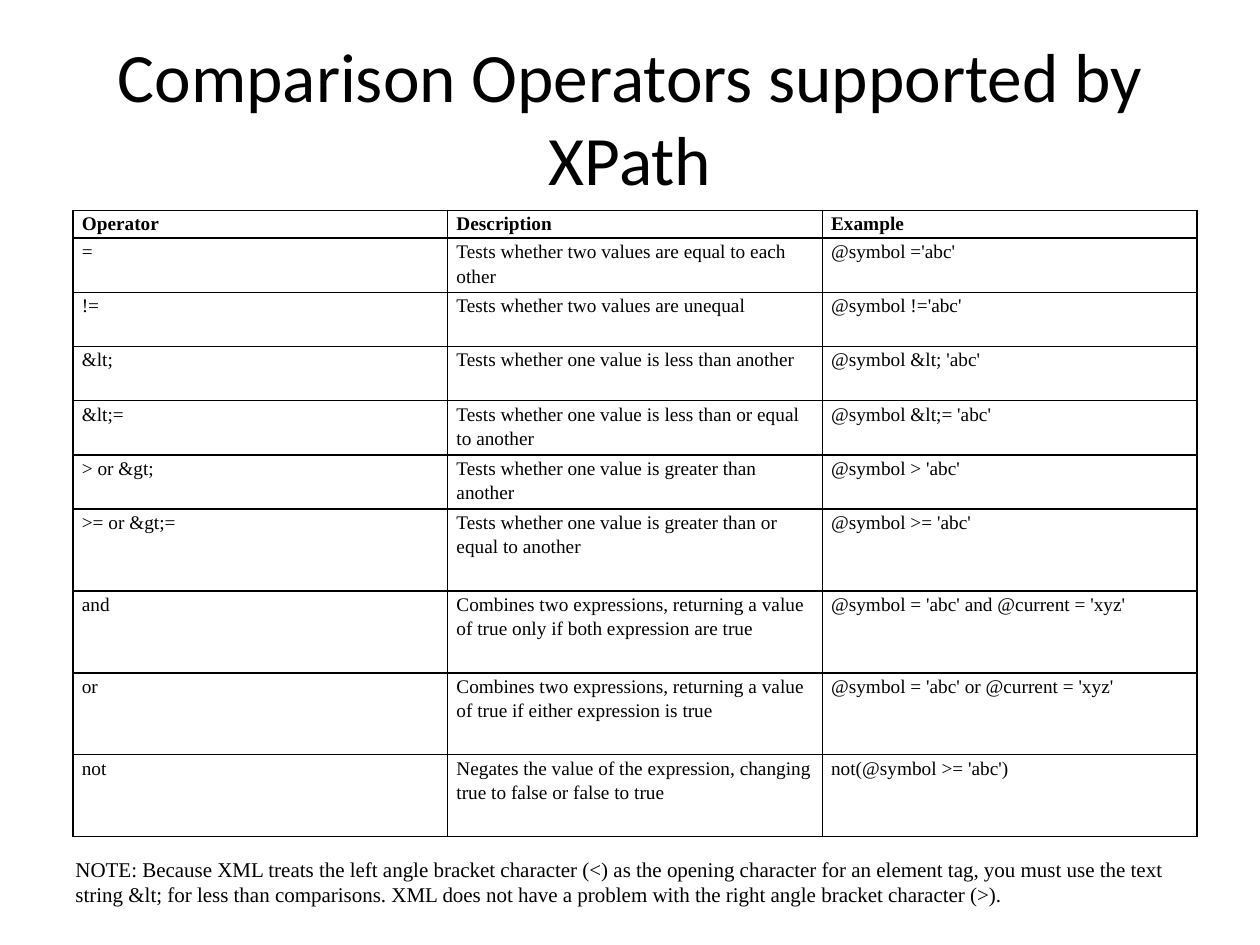
import pptx
import pptx.dml.color
import pptx.enum.text
import pptx.oxml.ns
import pptx.util
from lxml import etree
from pptx.util import Inches

COLORS = {"ink": "000000"}
SERIF = "Times New Roman"
ROW_HEIGHTS = [0.22] + [0.43] * 5 + [0.65] * 4
OPERATORS = [
    ("Operator", "Description", "Example"),
    ("=", "Tests whether two values are equal to each other", "@symbol ='abc'"),
    ("!=", "Tests whether two values are unequal", "@symbol !='abc'"),
    ("&lt;", "Tests whether one value is less than another", "@symbol &lt; 'abc'"),
    ("&lt;=", "Tests whether one value is less than or equal to another", "@symbol &lt;= 'abc'"),
    ("> or &gt;", "Tests whether one value is greater than another", "@symbol > 'abc'"),
    (">= or &gt;=", "Tests whether one value is greater than or equal to another", "@symbol >= 'abc'"),
    ("and", "Combines two expressions, returning a value of true only if both expression are true",
     "@symbol = 'abc' and @current = 'xyz'"),
    ("or", "Combines two expressions, returning a value of true if either expression is true",
     "@symbol = 'abc' or @current = 'xyz'"),
    ("not", "Negates the value of the expression, changing true to false or false to true",
     "not(@symbol >= 'abc')"),
]
NOTE = (
    "NOTE: Because XML treats the left angle bracket character (<) as the opening character "
    "for an element tag, you must use the text string &lt; for less than comparisons. "
    "XML does not have a problem with the right angle bracket character (>)."
)


def write(frame, text, size, font, bold=False):
    frame.text = text
    frame.word_wrap = True
    paragraph = frame.paragraphs[0]
    for run in paragraph.runs:
        run.font.size = pptx.util.Pt(size)
        run.font.name = font
        run.font.bold = bold
        run.font.color.rgb = pptx.dml.color.RGBColor.from_string(COLORS["ink"])
    return paragraph


def add_borders(cell):
    properties = cell._tc.get_or_add_tcPr()
    for side in ("a:lnL", "a:lnR", "a:lnT", "a:lnB"):
        line = etree.SubElement(properties, pptx.oxml.ns.qn(side), w=str(pptx.util.Pt(1)))
        fill = etree.SubElement(line, pptx.oxml.ns.qn("a:solidFill"))
        etree.SubElement(fill, pptx.oxml.ns.qn("a:srgbClr"), val=COLORS["ink"])


def place_title(slide, left, top, width, height):
    title = slide.shapes.title
    title.left, title.top, title.width, title.height = left, top, width, height
    frame = title.text_frame
    paragraph = write(frame, "Comparison Operators supported by XPath", 39.6, "Calibri")
    paragraph.alignment = pptx.enum.text.PP_ALIGN.CENTER
    frame.vertical_anchor = pptx.enum.text.MSO_ANCHOR.MIDDLE
    frame.auto_size = pptx.enum.text.MSO_AUTO_SIZE.NONE


def format_cell(cell, text, bold):
    cell.margin_left = cell.margin_right = Inches(0.07)
    cell.margin_top = cell.margin_bottom = 0
    paragraph = write(cell.text_frame, text, 11, SERIF, bold)
    paragraph.line_spacing = 1.15
    paragraph.space_after = pptx.util.Pt(10)
    add_borders(cell)
    cell.fill.background()


def place_operators(slide, left, top, width, height):
    columns = len(OPERATORS[0])
    table = slide.shapes.add_table(len(OPERATORS), columns, left, top, width, height).table
    table.first_row = table.horz_banding = False
    for column in table.columns:
        column.width = width // columns
    for index, (row, row_height, texts) in enumerate(zip(table.rows, ROW_HEIGHTS, OPERATORS)):
        row.height = Inches(row_height)
        for cell, text in zip(row.cells, texts):
            format_cell(cell, text, bold=index == 0)


def place_note(slide, left, top, width, height):
    frame = slide.shapes.add_textbox(left, top, width, height).text_frame
    write(frame, NOTE, 12, SERIF)
    frame.vertical_anchor = pptx.enum.text.MSO_ANCHOR.MIDDLE
    frame.auto_size = pptx.enum.text.MSO_AUTO_SIZE.SHAPE_TO_FIT_TEXT


def main():
    deck = pptx.Presentation()
    deck.slide_width, deck.slide_height = Inches(10), Inches(7.5)
    slide = deck.slides.add_slide(deck.slide_layouts.get_by_name("Title Only"))
    place_title(slide, Inches(0.5), Inches(0.3), Inches(9), Inches(1.25))
    place_operators(slide, Inches(0.58), Inches(1.67), Inches(8.92), Inches(4.95))
    place_note(slide, Inches(0.5), Inches(6.75), Inches(9.08), Inches(0.5))
    deck.save("out.pptx")


if __name__ == "__main__":
    main()
